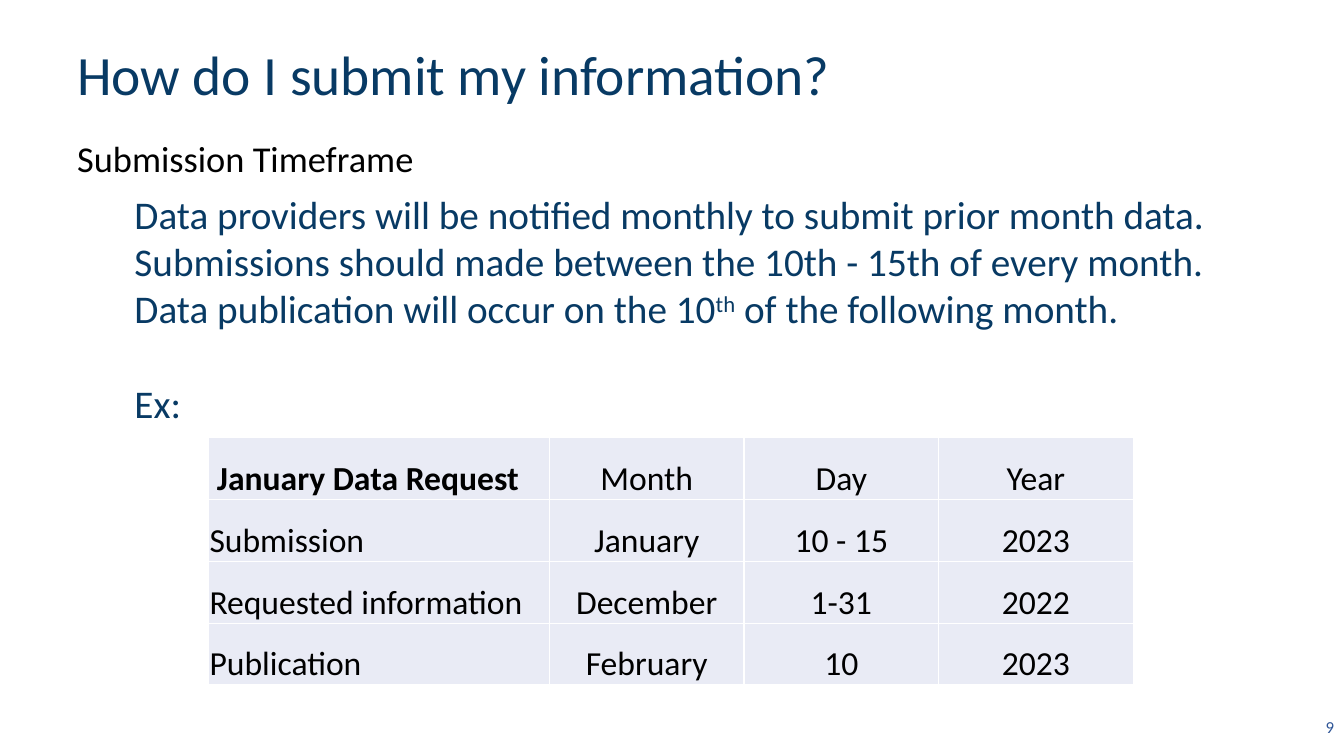
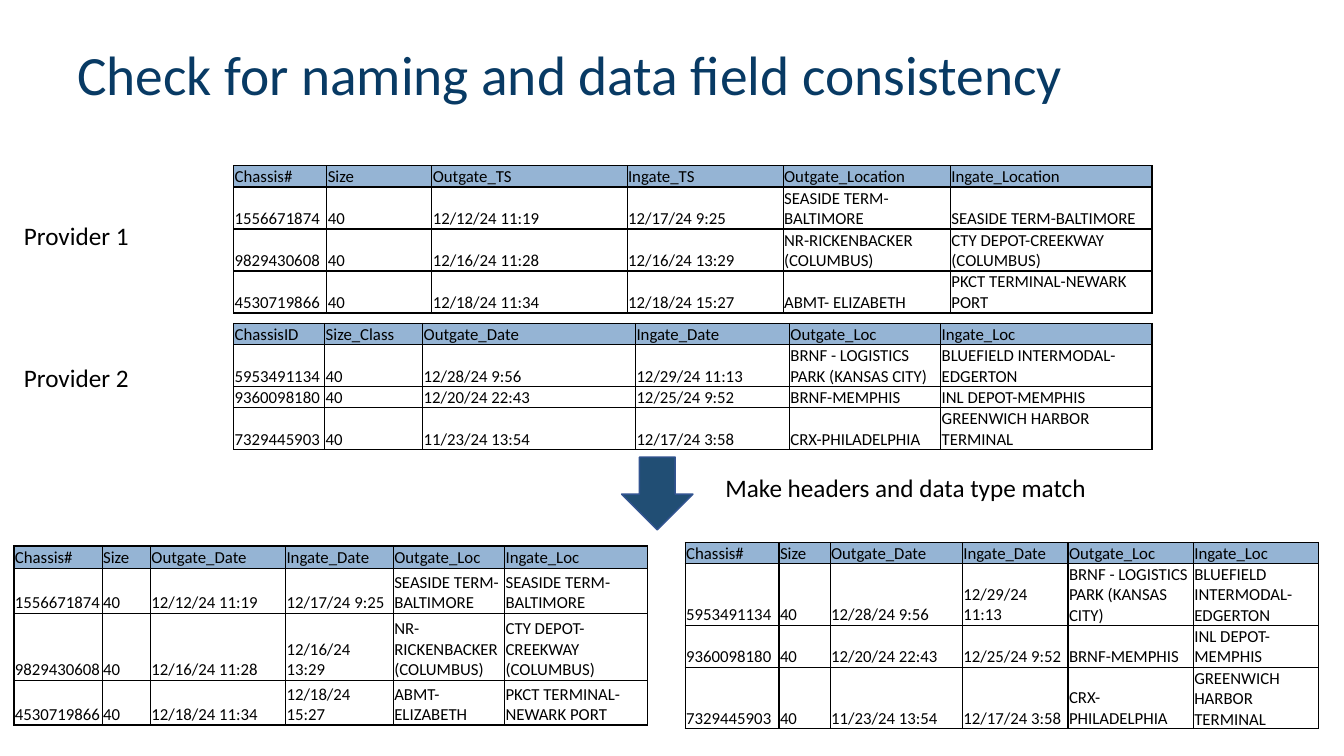
from pptx import Presentation
from pptx.dml.color import RGBColor as RGB
from pptx.enum.shapes import MSO_SHAPE as SHAPE
from pptx.enum.text import MSO_ANCHOR as ANCHOR, PP_ALIGN as ALIGN
from pptx.oxml import parse_xml
from pptx.oxml.ns import nsdecls
from pptx.util import Pt

COLORS = {
    "title": "083A64", "text": "000000", "page": "2F5597",
    "header": "95B4D4", "pale": "E9EBF5", "white": "FFFFFF",
    "arrow": "214E74", "arrow_line": "325491",
}
FONT = "Calibri"


def put_text(tf, text, size=18, color="text", bold=False, align=ALIGN.LEFT,
             anchor=ANCHOR.TOP, spacing=1.0, gap=0):
    """Fill a text frame: one paragraph per line, ^marked^ parts raised."""
    tf.word_wrap = True
    tf.vertical_anchor = anchor
    for i, line in enumerate(text.split("\n")):
        p = tf.add_paragraph() if i else tf.paragraphs[0]
        p.alignment = align
        p.line_spacing = spacing
        p.space_before = Pt(gap if i else 0)
        for j, part in enumerate(line.split("^")):
            r = p.add_run()
            r.text = part
            r.font.name, r.font.size, r.font.bold = FONT, Pt(size), bold
            r.font.color.rgb = RGB.from_string(COLORS[color])
            if j % 2:
                r.font._element.set("baseline", "30000")


def add_grid(s, left, top, widths, heights, rows, size=12, border="text",
             header_fill="header", body_fill=None, body_align=ALIGN.LEFT):
    """Add a table; body_align applies to every column but the first."""
    frame = s.shapes.add_table(len(rows), len(widths), Pt(left), Pt(top),
                               Pt(sum(widths)), Pt(sum(heights)))
    table = frame.table
    table.first_row = table.horz_banding = False
    for column, width in zip(table.columns, widths):
        column.width = Pt(width)
    for i, (row, height) in enumerate(zip(rows, heights)):
        table.rows[i].height = Pt(height)
        for j, text in enumerate(row):
            cell = table.cell(i, j)
            cell.margin_left = cell.margin_right = cell.margin_top = Pt(0.7)
            cell.margin_bottom = 0
            cell.vertical_anchor = ANCHOR.BOTTOM
            put_text(cell.text_frame, text, size=size,
                     align=body_align if j else ALIGN.LEFT)
            tc_pr = cell._tc.get_or_add_tcPr()
            for side in "LRTB":
                tc_pr.append(parse_xml(
                    f'<a:ln{side} {nsdecls("a")} w="12700"><a:solidFill>'
                    f'<a:srgbClr val="{COLORS[border]}"/></a:solidFill></a:ln{side}>'))
            fill = body_fill if i else header_fill
            if fill:
                cell.fill.solid()
                cell.fill.fore_color.rgb = RGB.from_string(COLORS[fill])
            else:
                cell.fill.background()
    return table


prs = Presentation()
prs.slide_width, prs.slide_height = Pt(960), Pt(540)

# Titles and text boxes: (left, top, width, height), text, format
title_box = (48, 38, 753, 34)
title_style = dict(size=39.6, color="title", anchor=ANCHOR.MIDDLE, spacing=0.9)
timeframe = (
    "Data providers will be notified monthly to submit prior month data. "
    "Submissions should made between the 10th - 15th of every month. "
    "Data publication will occur on the 10^th^ of the following month.\nEx:")
slide_texts = [
    [
        (title_box, "How do I submit my information?", title_style),
        ((48, 93.5, 767, 39), "Submission Timeframe", dict(size=26)),
        ((89, 132.5, 806, 180), timeframe, dict(size=28, color="title", gap=34)),
        ((926, 502, 34, 34), "9", dict(size=12, color="page", align=ALIGN.RIGHT,
                                       anchor=ANCHOR.MIDDLE)),
    ],
    [
        (title_box, "Check for naming and data field consistency", title_style),
        ((511, 334, 285, 29), "Make headers and data type match", {}),
        ((10, 154, 113, 29), "Provider 1", {}),
        ((10, 255.5, 113, 29), "Provider 2", {}),
    ],
]
for texts in slide_texts:
    s = prs.slides.add_slide(prs.slide_layouts[6])
    for box, text, style in texts:
        sp = s.shapes.add_textbox(*map(Pt, box))
        put_text(sp.text_frame, text, **style)
schedule_slide, naming_slide = prs.slides

# Submission schedule
schedule = [
    ["January Data Request", "Month", "Day", "Year"],
    ["Submission", "January", "10 - 15", "2023"],
    ["Requested information", "December", "1-31", "2022"],
    ["Publication", "February", "10", "2023"],
]
table = add_grid(schedule_slide, 149, 312.5, [243.5] + [139] * 3, [44.2] * 4, schedule,
                 size=24, border="white", header_fill="pale", body_fill="pale",
                 body_align=ALIGN.CENTER)
corner = table.cell(0, 0)
corner.margin_left = Pt(6)
corner.text_frame.paragraphs[0].runs[0].font.bold = True

# Provider data, before and after the headers are matched
provider_1 = [
    ["1556671874", "40", "12/12/24 11:19", "12/17/24 9:25",
     "SEASIDE TERM-BALTIMORE", "SEASIDE TERM-BALTIMORE"],
    ["9829430608", "40", "12/16/24 11:28", "12/16/24 13:29",
     "NR-RICKENBACKER (COLUMBUS)", "CTY DEPOT-CREEKWAY (COLUMBUS)"],
    ["4530719866", "40", "12/18/24 11:34", "12/18/24 15:27",
     "ABMT- ELIZABETH", "PKCT TERMINAL-NEWARK PORT"],
]
provider_2 = [
    ["5953491134", "40", "12/28/24 9:56", "12/29/24 11:13",
     "BRNF - LOGISTICS PARK (KANSAS CITY)", "BLUEFIELD INTERMODAL-EDGERTON"],
    ["9360098180", "40", "12/20/24 22:43", "12/25/24 9:52",
     "BRNF-MEMPHIS", "INL DEPOT-MEMPHIS"],
    ["7329445903", "40", "11/23/24 13:54", "12/17/24 3:58",
     "CRX-PHILADELPHIA", "GREENWICH HARBOR TERMINAL"],
]
header_1 = ["Chassis#", "Size", "Outgate_TS", "Ingate_TS",
            "Outgate_Location", "Ingate_Location"]
header_2 = ["ChassisID", "Size_Class", "Outgate_Date", "Ingate_Date",
            "Outgate_Loc", "Ingate_Loc"]
matched = header_1[:2] + header_2[2:]

grids = [
    (167, 118.5, [66.5, 75, 139.5, 111.5, 119.5, 144], [15, 30, 30, 30],
     header_1, provider_1),
    (167, 231, [65, 70, 152, 110, 108, 151], [15, 30, 15, 30], header_2, provider_2),
    (10, 390, [63, 34.5, 96.5, 77, 79.5, 102], [16, 32, 48, 32], matched, provider_1),
    (489.5, 387.5, [67, 36.5, 94.5, 75.5, 89.5, 89.5], [15, 44, 30, 44],
     matched, provider_2),
]
for left, top, widths, heights, header, rows in grids:
    add_grid(naming_slide, left, top, widths, heights, [header] + rows)

arrow = naming_slide.shapes.add_shape(SHAPE.DOWN_ARROW, Pt(444), Pt(326.5), Pt(51), Pt(52))
arrow.shadow.inherit = False
arrow.fill.solid()
arrow.fill.fore_color.rgb = RGB.from_string(COLORS["arrow"])
arrow.line.color.rgb = RGB.from_string(COLORS["arrow_line"])
arrow.line.width = Pt(1)

prs.save("out.pptx")
